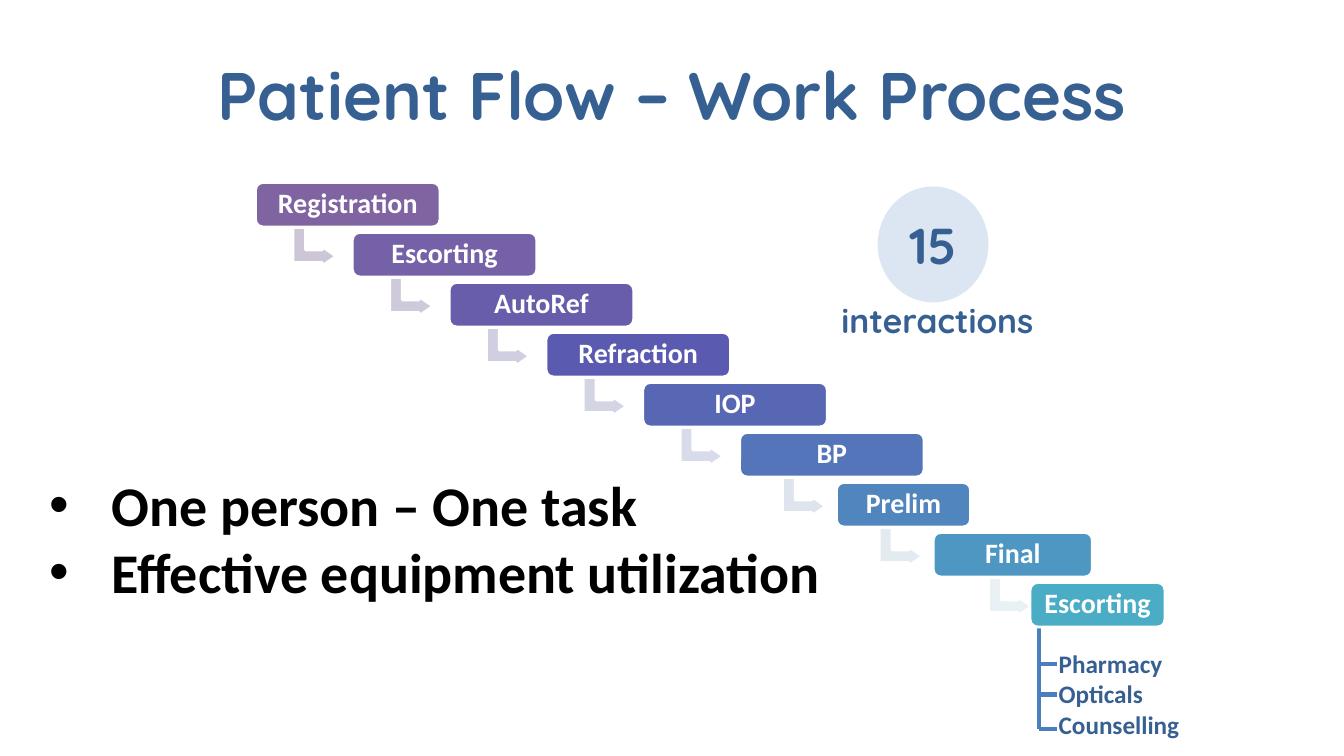
from lxml import etree
from pptx import Presentation
from pptx.dml.color import RGBColor
from pptx.enum.shapes import MSO_CONNECTOR, MSO_SHAPE
from pptx.enum.text import MSO_ANCHOR, MSO_AUTO_SIZE, PP_ALIGN
from pptx.oxml.ns import qn
from pptx.util import Cm, Pt

CENTER, LEFT = PP_ALIGN.CENTER, PP_ALIGN.LEFT
MIDDLE = MSO_ANCHOR.MIDDLE
TITLE_ONLY = 5
HEADING_FONT, BODY_FONT = "Quicksand", "Calibri"

COLORS = {
    "navy": "376092",
    "pale": "DCE6F2",
    "branch": "4B7EBC",
    "white": "FFFFFF",
    "black": "000000",
}

# label, width, fill, arrow offset from the box's left edge, arrow fill
STEPS = [
    ("Registration", 4.65, "8064A2", 1.0, "CDC6D7"),
    ("Escorting", 4.65, "7561A7", 1.0, "CECADC"),
    ("AutoRef", 4.65, "685DAB", 1.0, "D0CFE1"),
    ("Refraction", 4.65, "5A5BB0", 1.0, "D3D5E5"),
    ("IOP", 4.65, "5767B4", 1.0, "D8DCEA"),
    ("BP", 4.65, "5475B9", 1.14, "DEE4EE"),
    ("Prelim", 3.38, "5185BD", 1.14, "E3EBF1"),
    ("Final", 4.01, "4E97C2", 1.45, "E9F1F5"),
    ("Escorting", 3.4, "4BACC6", None, None),
]
STEP_LEFT, STEP_TOP = 6.44, 4.6
STEP_ACROSS, STEP_DOWN = 2.44, 1.26
STEP_HEIGHT = 1.12
ARROW_DROP = 1.07

# label, width of its text box, height of its tick
DESTINATIONS = [
    ("Pharmacy", 3.35, 16.74),
    ("Opticals", 3.05, 17.5),
    ("Counselling", 4.34, 18.36),
]
DESTINATION_LEFT, DESTINATION_TOP, DESTINATION_PITCH = 26.43, 16.2, 0.78
TRUNK_X, TRUNK_TOP, TICK_END = 26.19, 15.82, 26.64

TASKS = ["One person – One task", "Effective equipment utilization"]


def rgb(color):
    return RGBColor.from_string(color)


def write(text_frame, text, size, font, color, alignment=CENTER):
    text_frame.text = text
    for paragraph in text_frame.paragraphs:
        paragraph.alignment = alignment
        for run in paragraph.runs:
            run.font.size = Pt(size)
            run.font.name = font
            run.font.bold = True
            run.font.color.rgb = rgb(color)


def add_text(slide, box, text, size, font, color, alignment=LEFT, wrap=True):
    text_box = slide.shapes.add_textbox(*map(Cm, box))
    text_frame = text_box.text_frame
    text_frame.word_wrap = wrap
    text_frame.auto_size = MSO_AUTO_SIZE.SHAPE_TO_FIT_TEXT
    write(text_frame, text, size, font, color, alignment)
    return text_box


def add_filled_shape(slide, kind, box, fill, outline=None):
    shape = slide.shapes.add_shape(kind, *map(Cm, box))
    shape.shadow.inherit = False
    shape.fill.solid()
    shape.fill.fore_color.rgb = rgb(fill)
    if outline:
        shape.line.color.rgb = rgb(outline)
        shape.line.width = Pt(2)
    else:
        shape.line.fill.background()
    return shape


def add_line(slide, *ends):
    line = slide.shapes.add_connector(MSO_CONNECTOR.STRAIGHT, *map(Cm, ends))
    line.line.color.rgb = rgb(COLORS["branch"])
    line.line.width = Pt(3)
    etree.SubElement(line._element.spPr, qn("a:effectLst"))


def add_bullet(paragraph, indent):
    properties = paragraph._p.get_or_add_pPr()
    properties.set("marL", str(Cm(indent)))
    properties.set("indent", str(-Cm(indent)))
    etree.SubElement(properties, qn("a:buFont")).set("typeface", "Arial")
    etree.SubElement(properties, qn("a:buChar")).set("char", "•")


def add_title(slide):
    title = slide.shapes.title
    title.left, title.top, title.width, title.height = map(Cm, (1.7, 0.76, 30.48, 3.18))
    title.text_frame.vertical_anchor = MIDDLE
    write(title.text_frame, "Patient Flow – Work Process", 48, HEADING_FONT, COLORS["navy"])


def add_interaction_count(slide):
    circle = add_filled_shape(slide, MSO_SHAPE.OVAL, (22.12, 4.7, 2.79, 2.92), COLORS["pale"])
    circle.text_frame.vertical_anchor = MIDDLE
    write(circle.text_frame, "15", 36, HEADING_FONT, COLORS["navy"])
    add_text(slide, (20.73, 7.44, 5.79, 1.27), "interactions", 24,
             HEADING_FONT, COLORS["navy"], CENTER)


def add_step(slide, left, top, label, width, fill):
    step = add_filled_shape(slide, MSO_SHAPE.ROUNDED_RECTANGLE,
                            (left, top, width, STEP_HEIGHT), fill, COLORS["white"])
    text_frame = step.text_frame
    text_frame.vertical_anchor = MIDDLE
    text_frame.margin_left = text_frame.margin_right = Cm(0.2)
    text_frame.margin_top = text_frame.margin_bottom = Cm(0.2)
    write(text_frame, label, 20, BODY_FONT, COLORS["white"])
    text_frame.paragraphs[0].line_spacing = 0.9


def add_step_arrow(slide, left, top, fill):
    arrow = add_filled_shape(slide, MSO_SHAPE.BENT_UP_ARROW,
                             (left, top, 0.97, 1.09), fill, COLORS["white"])
    arrow.rotation = 90
    for index, value in enumerate((0.33, 0.25, 0.36)):
        arrow.adjustments[index] = value


def add_staircase(slide):
    for index, (label, width, fill, arrow_offset, arrow_fill) in enumerate(STEPS):
        left = STEP_LEFT + index * STEP_ACROSS
        top = STEP_TOP + index * STEP_DOWN
        if arrow_fill:
            add_step_arrow(slide, left + arrow_offset, top + ARROW_DROP, arrow_fill)
        add_step(slide, left, top, label, width, fill)


def add_destinations(slide):
    add_line(slide, TRUNK_X, TRUNK_TOP, TRUNK_X, DESTINATIONS[-1][2])
    for index, (label, width, tick_y) in enumerate(DESTINATIONS):
        top = DESTINATION_TOP + index * DESTINATION_PITCH
        add_text(slide, (DESTINATION_LEFT, top, width, 1.02), label, 18,
                 BODY_FONT, COLORS["navy"])
        add_line(slide, TRUNK_X, tick_y, TICK_END, tick_y)


def add_tasks(slide):
    text_box = add_text(slide, (0.99, 11.73, 20.57, 3.68), "\n".join(TASKS), 40,
                        BODY_FONT, COLORS["black"], wrap=False)
    for paragraph in text_box.text_frame.paragraphs:
        add_bullet(paragraph, 1.57)


def main():
    presentation = Presentation()
    presentation.slide_width, presentation.slide_height = Cm(33.87), Cm(19.05)
    slide = presentation.slides.add_slide(presentation.slide_layouts[TITLE_ONLY])
    add_title(slide)
    add_interaction_count(slide)
    add_destinations(slide)
    add_staircase(slide)
    add_tasks(slide)
    presentation.save("out.pptx")


if __name__ == "__main__":
    main()
